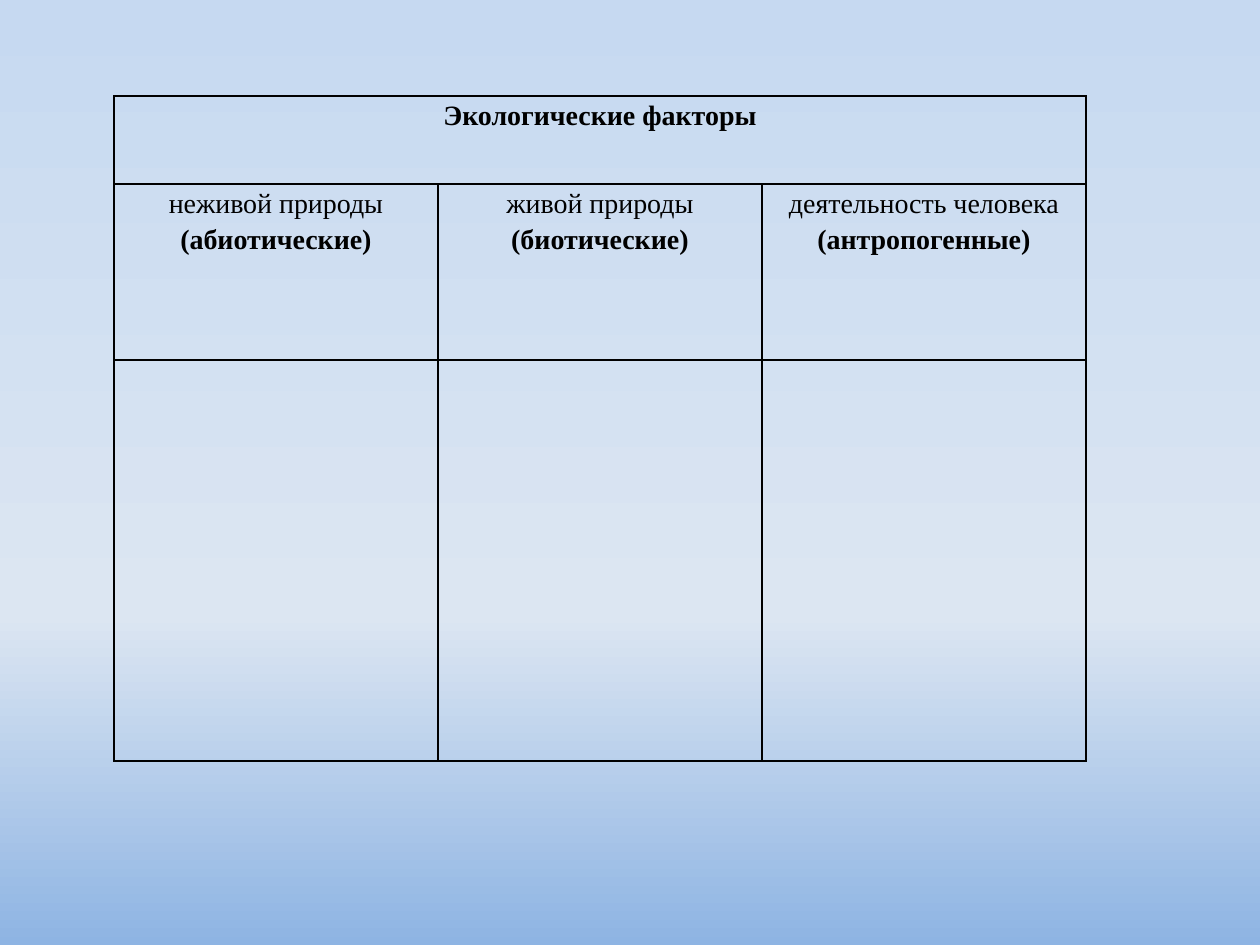
from copy import deepcopy

from lxml.etree import SubElement
from pptx import Presentation
from pptx.dml.color import RGBColor
from pptx.enum.text import PP_ALIGN
from pptx.oxml.ns import qn
from pptx.util import Pt

PX = 914400 / 126
BLACK = RGBColor(0x00, 0x00, 0x00)
SKY = RGBColor(0xC6, 0xD9, 0xF1)
MIST = RGBColor(0xDC, 0xE6, 0xF2)
BLUE = RGBColor(0x8E, 0xB4, 0xE3)
FONT = "Times New Roman"

TITLE = "Экологические факторы"
FACTORS = [
    ("неживой природы", "(абиотические)"),
    ("живой природы", "(биотические)"),
    ("деятельность человека", "(антропогенные)"),
]
ROW_HEIGHTS = [88, 176, 401]


def px(n):
    return round(n * PX)


def paint_background(slide):
    fill = slide.background.fill
    fill.gradient()
    fill.gradient_angle = 270
    stop_list = slide.element.find(".//" + qn("a:gsLst"))
    stop_list.insert(1, deepcopy(stop_list[0]))
    stops = [(0, SKY), (0.65, MIST), (1, BLUE)]
    for stop, (position, color) in zip(fill.gradient_stops, stops):
        stop.position = position
        stop.color.rgb = color


def style_cell(cell):
    """Give the cell black borders, no fill and narrow side margins."""
    cell.margin_left = cell.margin_right = px(9)
    cell.margin_top = cell.margin_bottom = 0
    tc_pr = cell._tc.get_or_add_tcPr()
    for side in ("a:lnL", "a:lnR", "a:lnT", "a:lnB"):
        ln = SubElement(tc_pr, qn(side), w=str(Pt(1)))
        solid = SubElement(ln, qn("a:solidFill"))
        SubElement(solid, qn("a:srgbClr"), val=str(BLACK))
    cell.fill.background()


def write_cell(cell, lines):
    """Write centred lines, the last one in bold."""
    tf = cell.text_frame
    tf.text = "\n".join(lines)
    for p in tf.paragraphs:
        p.alignment = PP_ALIGN.CENTER
        p.line_spacing = 1.15
        font = p.runs[0].font
        font.name = FONT
        font.size = Pt(16)
        font.color.rgb = BLACK
        font.bold = p.text == lines[-1]


def add_factor_table(slide, left, top, width):
    frame = slide.shapes.add_table(
        len(ROW_HEIGHTS), len(FACTORS),
        px(left), px(top), px(width), px(sum(ROW_HEIGHTS)))
    table = frame.table
    table.first_row = table.horz_banding = False
    for row, height in zip(table.rows, ROW_HEIGHTS):
        row.height = px(height)
    for cell in table.iter_cells():
        style_cell(cell)
    table.cell(0, 0).merge(table.cell(0, len(FACTORS) - 1))
    write_cell(table.cell(0, 0), [TITLE])
    for col, lines in enumerate(FACTORS):
        write_cell(table.cell(1, col), lines)


def main():
    prs = Presentation()
    prs.slide_width, prs.slide_height = px(1260), px(945)
    slide = prs.slides.add_slide(prs.slide_layouts[6])
    paint_background(slide)
    add_factor_table(slide, 114, 96, 972)
    prs.save("out.pptx")


if __name__ == "__main__":
    main()
